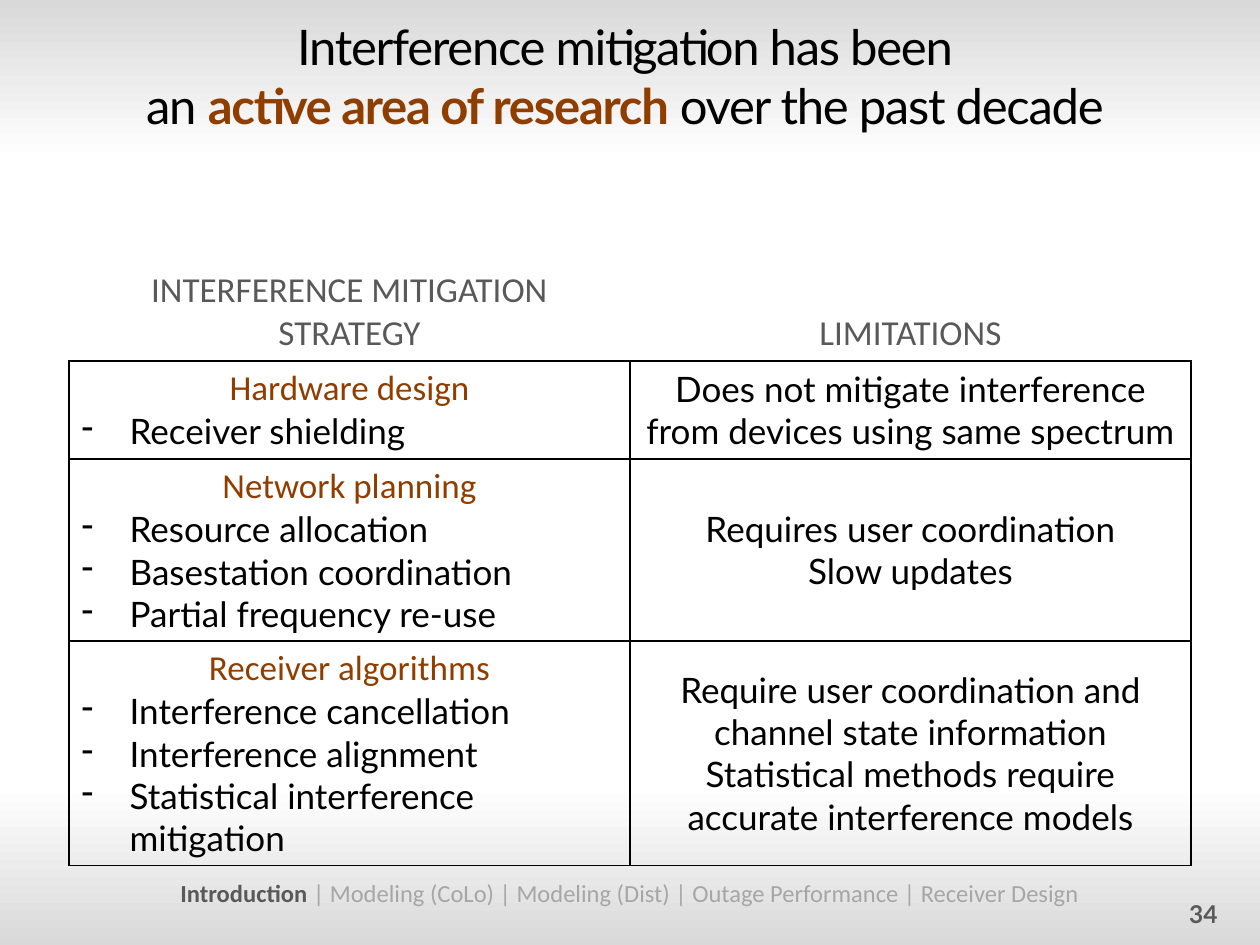
from pptx import Presentation
from pptx.dml.color import RGBColor as Rgb
from pptx.enum.text import MSO_ANCHOR as Anchor, MSO_AUTO_SIZE as Fit, PP_ALIGN as Align
from pptx.oxml.ns import qn
from pptx.util import Pt
from lxml.etree import SubElement as Sub

SCALE = 914400 / 126
COLORS = {"ink": "000000", "rust": "903E00", "gray": "595959", "pale": "A6A6A6",
          "edge": "D9D9D9", "white": "FFFFFF"}
FADE = [(0, "edge"), (17, "white"), (83, "white"), (100, "edge")]
HEADS = ["INTERFERENCE MITIGATION STRATEGY", "LIMITATIONS"]
ROWS = [
    ("Hardware design", ["Receiver shielding"],
     ["Does not mitigate interference from devices using same spectrum"]),
    ("Network planning",
     ["Resource allocation", "Basestation coordination", "Partial frequency re-use"],
     ["Requires user coordination", "Slow updates"]),
    ("Receiver algorithms",
     ["Interference cancellation", "Interference alignment",
      "Statistical interference mitigation"],
     ["Require user coordination and channel state information",
      "Statistical methods require accurate interference models"]),
]
HEIGHTS = [99, 98, 182, 224]


def px(n):
    return round(n * SCALE)


class Deck:
    def __init__(self, wide, high):
        self.prs = Presentation()
        self.prs.slide_width, self.prs.slide_height = px(wide), px(high)
        self.slide = self.prs.slides.add_slide(self.prs.slide_layouts[5])

    def backdrop(self, stops):
        fill = self.slide.background.fill
        fill.gradient()
        fill.gradient_angle = 90
        group = next(self.slide.element.iter(qn("a:gsLst")))
        for stop in list(group):
            group.remove(stop)
        for spot, color in stops:
            stop = Sub(group, qn("a:gs"), pos=str(spot * 1000))
            Sub(stop, qn("a:srgbClr"), val=COLORS[color])

    def add_run(self, para, text, color, track=0, **form):
        run = para.add_run()
        run.text = text
        for name, value in form.items():
            setattr(run.font, name, value)
        run.font.color.rgb = Rgb.from_string(COLORS[color])
        if track:
            run._r.get_or_add_rPr().set("spc", str(track))

    def place(self, shape, box, anchor):
        shape.left, shape.top, shape.width, shape.height = map(px, box)
        frame = shape.text_frame
        form = {"word_wrap": True, "auto_size": Fit.NONE, "vertical_anchor": anchor}
        for name, value in form.items():
            setattr(frame, name, value)
        return frame.paragraphs[0]

    def title(self, box, lines):
        para = self.place(self.slide.shapes.title, box, Anchor.TOP)
        para.alignment = Align.CENTER
        for i, line in enumerate(lines):
            if i:
                para.add_line_break()
            for text, color, bold in line:
                self.add_run(para, text, color, -70, name="Lato", size=Pt(28), bold=bold)

    def label(self, box, runs, font, align, anchor=Anchor.TOP):
        para = self.place(self.slide.shapes.add_textbox(0, 0, 0, 0), box, anchor)
        para.alignment = align
        for text, color, bold in runs:
            self.add_run(para, text, color, name=font, size=Pt(14), bold=bold)

    def border(self, cell, sides):
        props = cell._tc.get_or_add_tcPr()
        for i, side in enumerate("LRTB"):
            line = Sub(props, qn(f"a:ln{side}"), w=str(Pt(1)))
            if side in sides:
                Sub(Sub(line, qn("a:solidFill")), qn("a:srgbClr"), val=COLORS["ink"])
            else:
                Sub(line, qn("a:noFill"))
            props.insert(i, line)

    def cell(self, cell, items, anchor, sides):
        cell.fill.background()
        cell.vertical_anchor = anchor
        self.border(cell, sides)
        frame = cell.text_frame
        for i, (text, font, color, dash) in enumerate(items):
            para = frame.add_paragraph() if i else frame.paragraphs[0]
            para.alignment = Align.LEFT if dash else Align.CENTER
            if dash:
                props = para._p.get_or_add_pPr()
                props.set("marL", str(px(48)))
                props.set("indent", str(px(-48)))
                Sub(props, qn("a:buChar"), char="-")
            self.add_run(para, text, color, name=font, size=Pt(20), bold=False)

    def table(self, box, heads, rows, heights):
        grid = self.slide.shapes.add_table(len(rows) + 1, len(heads), *map(px, box)).table
        grid.horz_banding = False
        for row, high in zip(grid.rows, heights):
            row.height = px(high)
        for col, head in enumerate(heads):
            self.cell(grid.cell(0, col), [(head, "Calibri", "gray", False)],
                      Anchor.BOTTOM, "B")
        for i, (name, means, limits) in enumerate(rows, 1):
            left = [(name, "Calibri", "rust", False)]
            left += [(text, "Lato", "ink", True) for text in means]
            right = [(text, "Lato", "ink", False) for text in limits]
            for col, items in enumerate((left, right)):
                self.cell(grid.cell(i, col), items, Anchor.MIDDLE, "LRTB")


def main():
    deck = Deck(1260, 945)
    deck.backdrop(FADE)
    deck.title((32, 10, 1197, 861), [
        [("Interference mitigation has been ", "ink", False)],
        [("an ", "ink", False), ("active area of research", "rust", True),
         (" over the past decade ", "ink", False)]])
    deck.table((69, 262, 1122, sum(HEIGHTS)), HEADS, ROWS, HEIGHTS)
    deck.label((0, 872, 1260, 43), [
        ("Introduction ", "gray", True),
        ("| Modeling (CoLo) | Modeling (Dist) | Outage Performance | Receiver Design",
         "pale", False)], "Calibri", Align.CENTER)
    deck.label((936, 893, 294, 42), [("34", "gray", True)], "Lato", Align.RIGHT,
               Anchor.MIDDLE)
    deck.prs.save("out.pptx")


if __name__ == "__main__":
    main()
